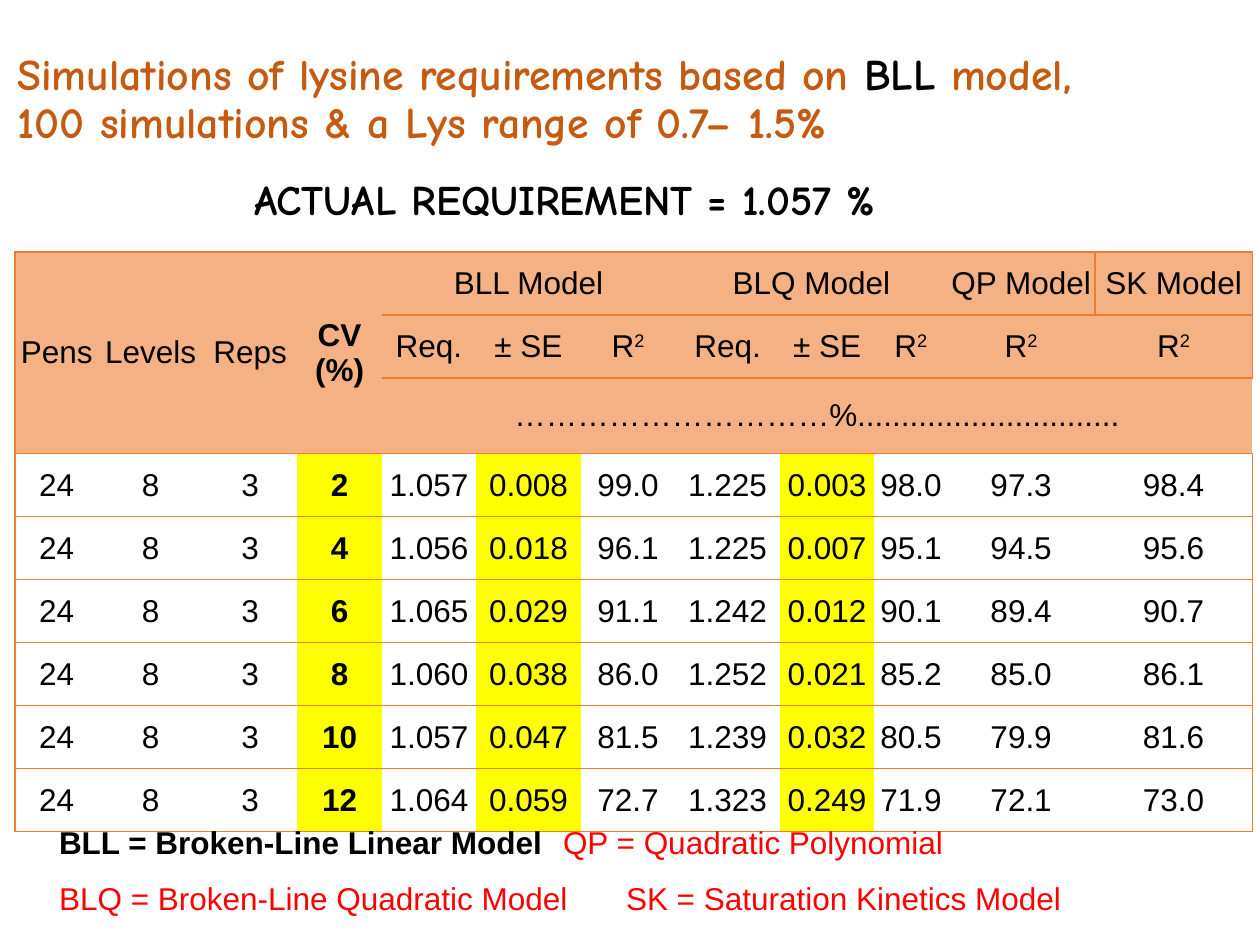
from dataclasses import dataclass

from lxml import etree
from pptx import Presentation
from pptx.dml.color import RGBColor
from pptx.enum.text import MSO_ANCHOR, MSO_AUTO_SIZE, PP_ALIGN
from pptx.oxml.ns import qn
from pptx.util import Inches, Pt

CENTER = PP_ALIGN.CENTER
MIDDLE, TOP = MSO_ANCHOR.MIDDLE, MSO_ANCHOR.TOP
FIT_SHAPE = MSO_AUTO_SIZE.SHAPE_TO_FIT_TEXT
COLORS = {"title": "C55A11", "text": "000000", "red": "FF0000", "header": "F4B183",
          "body": "FFFFFF", "highlight": "FFFF00", "border": "ED7D31"}
HEADING_FONT, BODY_FONT = "Comic Neue", "Arial"
PLAIN_STYLE = "{2D5ABB26-0587-4C30-8999-92F81FD0307C}"

COLUMN_WIDTHS = [0.66, 0.83, 0.75, 0.67, 0.75, 0.83, 0.75, 0.83, 0.75, 0.58, 1.17, 1.25]
ROW_HEIGHTS = [0.5, 0.5, 0.33] + [0.5] * 6
HEADER_ROWS, KEY_COLUMNS = 3, 4
CV_COLUMN, QP_COLUMN = 3, 10
HIGHLIGHTED_COLUMNS = (CV_COLUMN, 5, 8)
PENS, LEVELS, REPS = "24", "8", "3"
RESULTS = [
    "2 1.057 0.008 99.0 1.225 0.003 98.0 97.3 98.4",
    "4 1.056 0.018 96.1 1.225 0.007 95.1 94.5 95.6",
    "6 1.065 0.029 91.1 1.242 0.012 90.1 89.4 90.7",
    "8 1.060 0.038 86.0 1.252 0.021 85.2 85.0 86.1",
    "10 1.057 0.047 81.5 1.239 0.032 80.5 79.9 81.6",
    "12 1.064 0.059 72.7 1.323 0.249 71.9 72.1 73.0",
]


@dataclass
class Run:
    text: str
    color: str = "text"
    bold: bool = False
    superscript: bool = False


@dataclass
class HeaderCell:
    row: int
    column: int
    runs: list[Run]
    rows: int = 1
    columns: int = 1


R_SQUARED = [Run("R"), Run("2", superscript=True)]
HEADER_CELLS = [
    HeaderCell(0, 0, [Run("Pens")], rows=3),
    HeaderCell(0, 1, [Run("Levels")], rows=3),
    HeaderCell(0, 2, [Run("Reps")], rows=3),
    HeaderCell(0, CV_COLUMN, [Run("CV (%)", bold=True)], rows=3),
    HeaderCell(0, 4, [Run("BLL Model")], columns=3),
    HeaderCell(0, 7, [Run("BLQ Model")], columns=3),
    HeaderCell(0, QP_COLUMN, [Run("QP Model")]),
    HeaderCell(0, 11, [Run("SK Model")]),
    *[HeaderCell(1, column, [Run("Req.")]) for column in (4, 7)],
    *[HeaderCell(1, column, [Run("± SE")]) for column in (5, 8)],
    *[HeaderCell(1, column, R_SQUARED) for column in (6, 9, 10, 11)],
    HeaderCell(2, 4, [Run("…………………………%" + "." * 30)], columns=8),
]


def rgb(name: str) -> RGBColor:
    return RGBColor.from_string(COLORS[name])


def write_paragraph(paragraph, runs: list[Run], font_name: str, size: float) -> None:
    paragraph.font.name = font_name
    paragraph.font.size = Pt(size)
    for part in runs:
        for index, line in enumerate(part.text.split("\n")):
            if index:
                paragraph.add_line_break()
            run = paragraph.add_run()
            run.text = line
            run.font.name = font_name
            run.font.size = Pt(size)
            run.font.bold = part.bold
            run.font.color.rgb = rgb(part.color)
            if part.superscript:
                run.font._element.set("baseline", "30000")


def add_text(slide, left: float, top: float, width: float, height: float,
             paragraphs: list[list[Run]], font_name: str, size: float,
             spacing: float = 1.0, anchor=TOP):
    box = slide.shapes.add_textbox(Inches(left), Inches(top), Inches(width), Inches(height))
    frame = box.text_frame
    frame.word_wrap = True
    frame.vertical_anchor = anchor
    if anchor == TOP:
        frame.auto_size = FIT_SHAPE
    for index, runs in enumerate(paragraphs):
        paragraph = frame.add_paragraph() if index else frame.paragraphs[0]
        paragraph.line_spacing = spacing
        write_paragraph(paragraph, runs, font_name, size)
    return frame


def set_indent_and_tab(paragraph, indent: float, tab: float) -> None:
    properties = paragraph._p.get_or_add_pPr()
    properties.set("marL", str(Inches(indent)))
    properties.set("indent", "0")
    tabs = etree.Element(qn("a:tabLst"))
    etree.SubElement(tabs, qn("a:tab"), pos=str(Inches(tab)), algn="l")
    properties.find(qn("a:defRPr")).addprevious(tabs)


def set_borders(cell, sides: list[str]) -> None:
    """Draw the named sides, given in the order L, R, T, B."""
    properties = cell._tc.get_or_add_tcPr()
    for position, side in enumerate(sides):
        line = etree.Element(qn(f"a:ln{side}"), w=str(Pt(1)))
        fill = etree.SubElement(line, qn("a:solidFill"))
        etree.SubElement(fill, qn("a:srgbClr"), val=COLORS["border"])
        properties.insert(position, line)


def cell_sides(row: int, column: int) -> list[str]:
    in_key_header = row < HEADER_ROWS and column < KEY_COLUMNS
    drawn = {
        "L": column == 0,
        "R": column == len(COLUMN_WIDTHS) - 1 or (row, column) == (0, QP_COLUMN),
        "T": not in_key_header or row == 0,
        "B": not in_key_header or row == HEADER_ROWS - 1,
    }
    return [side for side, visible in drawn.items() if visible]


def fill_cell(cell, runs: list[Run]) -> None:
    paragraph = cell.text_frame.paragraphs[0]
    paragraph.alignment = CENTER
    write_paragraph(paragraph, runs, BODY_FONT, 18)


def add_results_table(slide) -> None:
    table = slide.shapes.add_table(len(ROW_HEIGHTS), len(COLUMN_WIDTHS), Inches(0.12),
                                   Inches(2), Inches(9.83), Inches(4.33)).table
    table._tbl.tblPr.find(qn("a:tableStyleId")).text = PLAIN_STYLE
    for column, width in zip(table.columns, COLUMN_WIDTHS):
        column.width = Inches(width)
    for row_index, (row, height) in enumerate(zip(table.rows, ROW_HEIGHTS)):
        row.height = Inches(height)
        for column_index, cell in enumerate(row.cells):
            cell.margin_left = cell.margin_right = cell.margin_top = cell.margin_bottom = 0
            cell.vertical_anchor = MIDDLE
            highlighted = column_index in HIGHLIGHTED_COLUMNS
            name = "highlight" if highlighted else "body"
            cell.fill.solid()
            cell.fill.fore_color.rgb = rgb("header" if row_index < HEADER_ROWS else name)
            set_borders(cell, cell_sides(row_index, column_index))
    for header in HEADER_CELLS:
        cell = table.cell(header.row, header.column)
        if header.rows > 1 or header.columns > 1:
            cell.merge(table.cell(header.row + header.rows - 1,
                                  header.column + header.columns - 1))
        fill_cell(cell, header.runs)
    for row_index, result in enumerate(RESULTS, HEADER_ROWS):
        for column_index, value in enumerate([PENS, LEVELS, REPS, *result.split()]):
            fill_cell(table.cell(row_index, column_index),
                      [Run(value, bold=column_index == CV_COLUMN)])


def main() -> None:
    presentation = Presentation()
    presentation.slide_width, presentation.slide_height = Inches(10), Inches(7.5)
    slide = presentation.slides.add_slide(presentation.slide_layouts[6])
    title = [Run("Simulations of lysine requirements based on ", "title", True),
             Run("BLL", bold=True),
             Run(" model,\n100 simulations & a Lys range of 0.7– 1.5%", "title", True)]
    add_text(slide, 0.04, 0.17, 9.88, 1.25, [title], HEADING_FONT, 25, 0.9, MIDDLE)
    add_results_table(slide)
    legend = [[Run("BLL = Broken-Line Linear Model\t", bold=True),
               Run("QP = Quadratic Polynomial", "red")],
              [Run("BLQ = Broken-Line Quadratic Model\tSK = Saturation Kinetics Model", "red")]]
    frame = add_text(slide, -0.13, 6.33, 10.08, 1.01, legend, BODY_FONT, 18, 1.5)
    for paragraph in frame.paragraphs:
        set_indent_and_tab(paragraph, 0.5, 5.44)
    add_text(slide, 1.92, 1.33, 7.08, 0.5, [[Run("ACTUAL REQUIREMENT = 1.057 %", bold=True)]],
             HEADING_FONT, 24)
    presentation.save("out.pptx")


if __name__ == "__main__":
    main()
